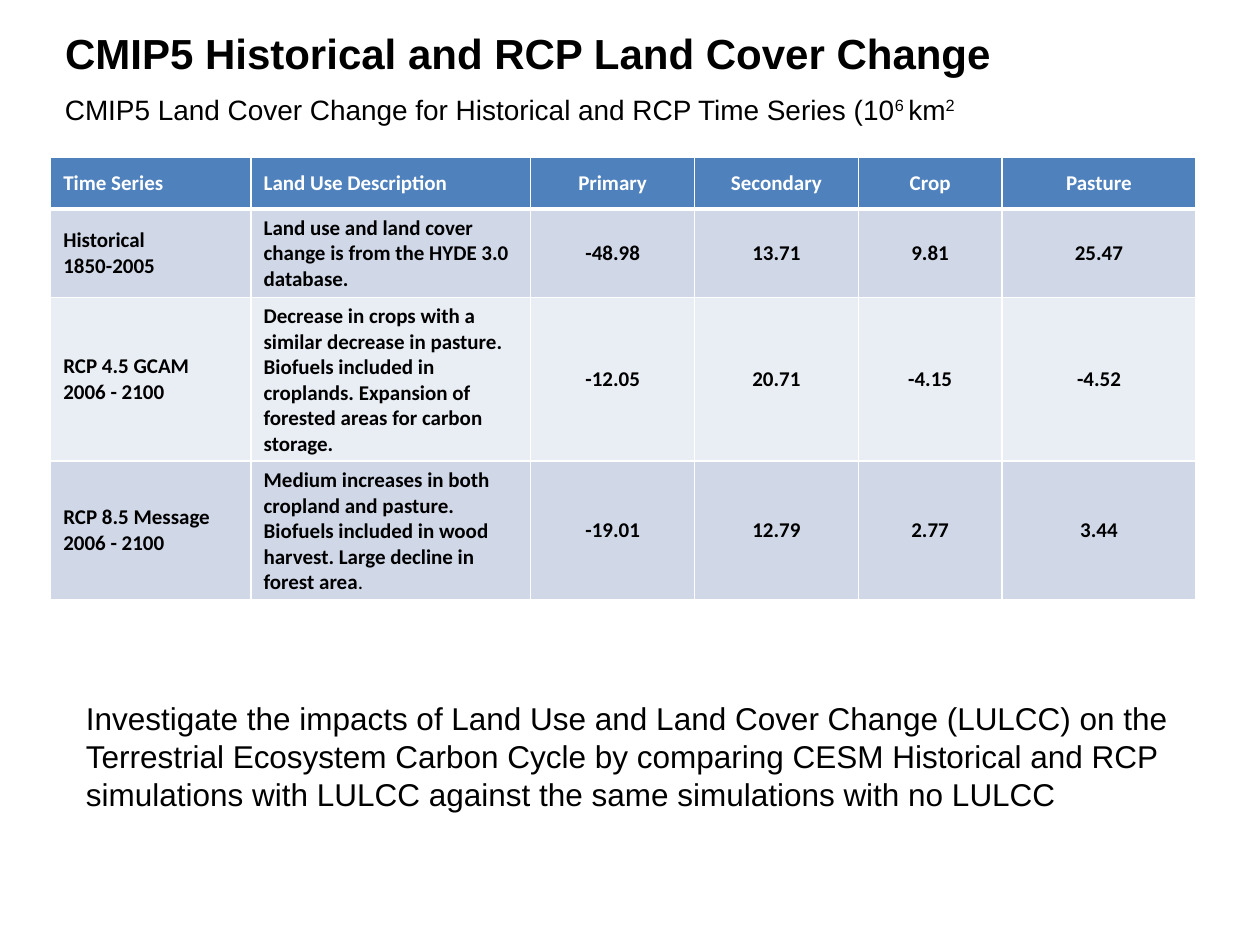
from dataclasses import dataclass

import pptx
import pptx.dml.color
import pptx.enum.text
import pptx.oxml.ns
import pptx.util
from lxml import etree

Pt = pptx.util.Pt
Align = pptx.enum.text.PP_ALIGN
Anchor = pptx.enum.text.MSO_ANCHOR
Fit = pptx.enum.text.MSO_AUTO_SIZE

BLACK, WHITE, BLUE = "000000", "FFFFFF", "4F81BD"
BANDS = ("D0D8E8", "E9EDF4")
WIDTHS = (114.48, 159.84, 93.6, 93.6, 82.08, 110.88)
HEADS = ("Time Series", "Land Use Description", "Primary", "Secondary", "Crop", "Pasture")


@dataclass(frozen=True)
class Span:
    text: str
    bold: bool | None = None
    raised: bool = False


@dataclass(frozen=True)
class Series:
    name: str
    years: str
    about: tuple[Span, ...]
    values: tuple[str, ...]
    height: float


@dataclass(frozen=True)
class Box:
    left: float
    top: float
    width: float
    height: float

    def points(self) -> tuple:
        return Pt(self.left), Pt(self.top), Pt(self.width), Pt(self.height)


SERIES = (
    Series("Historical", "1850-2005",
           (Span("Land use and land cover change is from the HYDE 3.0 database."),),
           ("-48.98", "13.71", "9.81", "25.47"), 50.4),
    Series("RCP 4.5 GCAM", "2006 - 2100",
           (Span("Decrease in crops with a similar decrease in pasture. Biofuels included in "
                 "croplands. Expansion of forested areas for carbon storage."),),
           ("-12.05", "20.71", "-4.15", "-4.52"), 93.6),
    Series("RCP 8.5 Message", "2006 - 2100",
           (Span("Medium increases in both cropland and pasture. Biofuels included in wood "
                 "harvest. Large decline in forest area"), Span(".", bold=False)),
           ("-19.01", "12.79", "2.77", "3.44"), 79.2),
)


def color(code: str) -> pptx.dml.color.RGBColor:
    return pptx.dml.color.RGBColor.from_string(code)


def write(frame, *lines: tuple[Span, ...], size: float, font: str = "Arial",
          ink: str = BLACK, bold: bool = False, align=Align.LEFT) -> None:
    """Fill a text frame with one paragraph for each line of spans."""
    for i, line in enumerate(lines):
        para = frame.paragraphs[0] if i == 0 else frame.add_paragraph()
        para.alignment = align
        for span in line:
            run = para.add_run()
            run.text = span.text
            run.font.name, run.font.size = font, Pt(size)
            run.font.bold = bold if span.bold is None else span.bold
            run.font.color.rgb = color(ink)
            if span.raised:
                run._r.get_or_add_rPr().set("baseline", "30000")


def add_text(slide, box: Box, *lines: tuple[Span, ...], size: float, anchor=Anchor.TOP) -> None:
    frame = slide.shapes.add_textbox(*box.points()).text_frame
    frame.word_wrap = False
    frame.vertical_anchor = anchor
    write(frame, *lines, size=size)


def edge(cell, base: float) -> None:
    """Draw white cell borders, with the bottom one of the given width."""
    qn = pptx.oxml.ns.qn
    props = cell._tc.get_or_add_tcPr()
    for side, width in (("L", 1), ("R", 1), ("T", 1), ("B", base)):
        line = etree.SubElement(props, qn(f"a:ln{side}"), w=str(Pt(width)))
        fill = etree.SubElement(line, qn("a:solidFill"))
        etree.SubElement(fill, qn("a:srgbClr"), val=WHITE)


def fill_cell(cell, *lines: tuple[Span, ...], fill: str, align, ink: str = BLACK,
              base: float = 1) -> None:
    edge(cell, base)
    cell.fill.solid()
    cell.fill.fore_color.rgb = color(fill)
    cell.vertical_anchor = Anchor.MIDDLE
    write(cell.text_frame, *lines, size=12, font="Calibri", ink=ink, bold=True, align=align)


def add_grid(slide, box: Box) -> None:
    table = slide.shapes.add_table(len(SERIES) + 1, len(HEADS), *box.points()).table
    for col, width in zip(table.columns, WIDTHS):
        col.width = Pt(width)
    for row, height in zip(table.rows, (29.5, *(s.height for s in SERIES))):
        row.height = Pt(height)
    for c, head in enumerate(HEADS):
        fill_cell(table.cell(0, c), (Span(head),), fill=BLUE, ink=WHITE, base=3,
                  align=Align.LEFT if c < 2 else Align.CENTER)
    for r, series in enumerate(SERIES, 1):
        band = BANDS[(r - 1) % 2]
        fill_cell(table.cell(r, 0), (Span(series.name),), (Span(series.years),),
                  fill=band, align=Align.JUSTIFY)
        fill_cell(table.cell(r, 1), series.about, fill=band, align=Align.LEFT)
        for c, value in enumerate(series.values, 2):
            fill_cell(table.cell(r, c), (Span(value),), fill=band, align=Align.CENTER)


def main() -> None:
    deck = pptx.Presentation()
    deck.slide_width, deck.slide_height = Pt(720), Pt(540)
    slide = deck.slides.add_slide(deck.slide_layouts[5])

    title = slide.shapes.title
    title.left, title.top, title.width, title.height = Box(30, 12.24, 648, 36).points()
    title.text_frame.auto_size = Fit.NONE
    title.text_frame.vertical_anchor = Anchor.TOP
    write(title.text_frame, (Span("CMIP5 Historical and RCP Land Cover Change"),),
          size=24, bold=True)

    add_text(slide, Box(30, 49, 542, 26.6),
             (Span("CMIP5 Land Cover Change for Historical and RCP Time Series (10"),
              Span("6 ", raised=True), Span("km"), Span("2", raised=True)),
             size=16, anchor=Anchor.MIDDLE)
    add_grid(slide, Box(29, 90, 654, 252.7))
    add_text(slide, Box(42, 396, 638.6, 72.7),
             (Span("Investigate the impacts of Land Use and Land Cover Change (LULCC) on the"),),
             (Span("Terrestrial Ecosystem Carbon Cycle by comparing CESM Historical and RCP"),),
             (Span("simulations with LULCC against the same simulations with no LULCC"),),
             size=18)
    deck.save("out.pptx")


if __name__ == "__main__":
    main()
